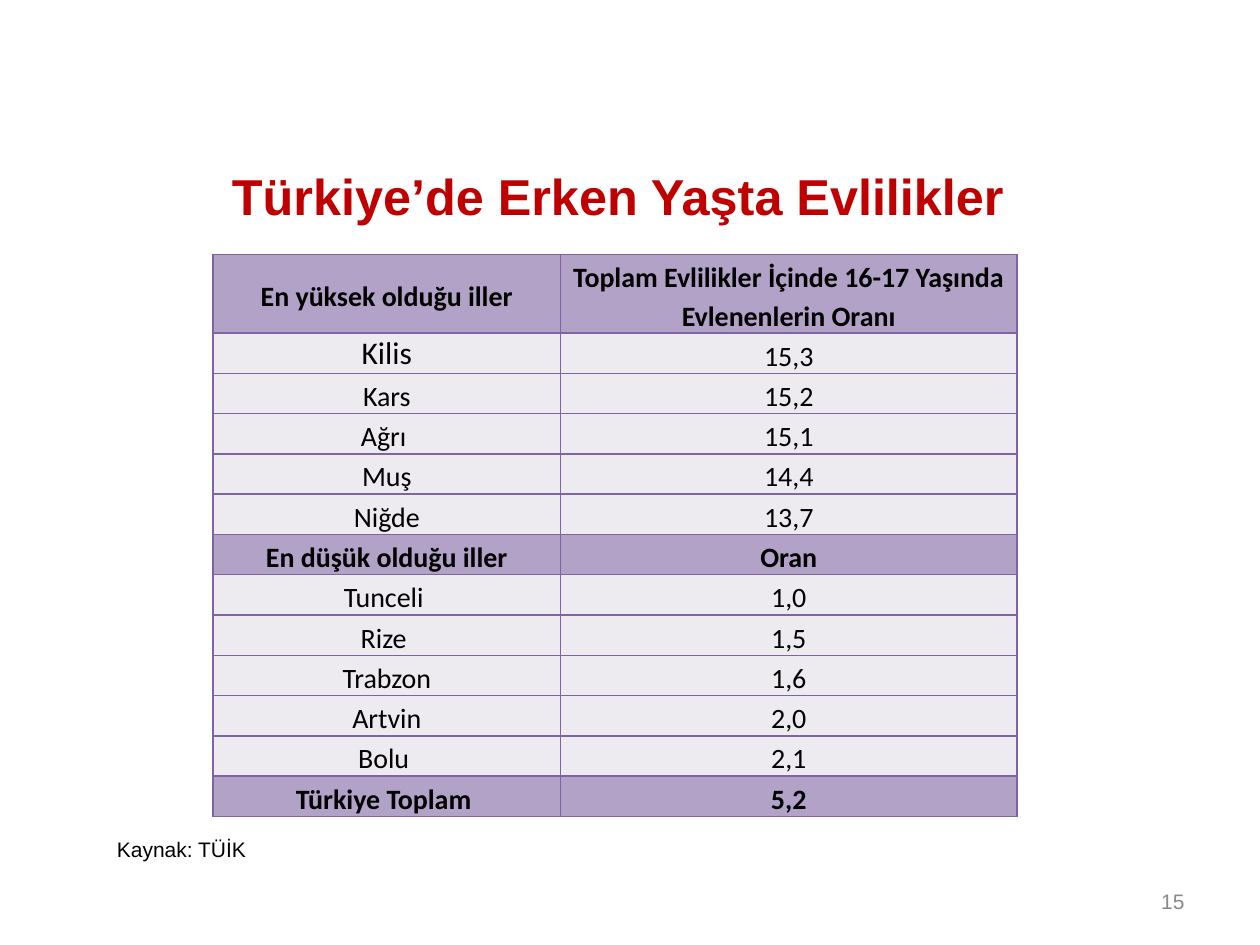
import pptx
import pptx.dml.color
import pptx.enum.text
import pptx.oxml.ns
import pptx.util
from lxml import etree

Inches = pptx.util.Inches
Pt = pptx.util.Pt
RGBColor = pptx.dml.color.RGBColor
Align = pptx.enum.text.PP_ALIGN
Anchor = pptx.enum.text.MSO_ANCHOR
qn = pptx.oxml.ns.qn

RED = RGBColor(0xC0, 0x00, 0x00)
BLACK = RGBColor(0x00, 0x00, 0x00)
GREY = RGBColor(0x89, 0x89, 0x89)
PURPLE = RGBColor(0x80, 0x64, 0xA2)
BAND = RGBColor(0xB3, 0xA2, 0xC7)
PALE = RGBColor(0xED, 0xEA, 0xF0)

HEADING_ROWS = (0, 6, 12)
RATES = [
    ("En yüksek olduğu iller", "Toplam Evlilikler İçinde 16-17 Yaşında Evlenenlerin Oranı"),
    ("Kilis", "15,3"),
    ("Kars", "15,2"),
    ("Ağrı ", "15,1"),
    ("Muş", "14,4"),
    ("Niğde", "13,7"),
    ("En düşük olduğu iller", "Oran"),
    ("Tunceli ", "1,0"),
    ("Rize ", "1,5"),
    ("Trabzon", "1,6"),
    ("Artvin", "2,0"),
    ("Bolu ", "2,1"),
    ("Türkiye Toplam ", "5,2"),
]


class SlideBuilder:
    text_font = "Arial"
    table_font = "Calibri"

    def __init__(self, slide):
        self.slide = slide

    def span(self, para, text, size, color, font, bold=False):
        span = para.add_run()
        span.text = text
        span.font.name = font
        span.font.size = Pt(size)
        span.font.bold = bold
        span.font.color.rgb = color

    def text(self, place, text, size, color, align=Align.LEFT, anchor=Anchor.TOP, bold=False):
        box = self.slide.shapes.add_textbox(*map(Inches, place))
        frame = box.text_frame
        frame.word_wrap = True
        frame.vertical_anchor = anchor
        para = frame.paragraphs[0]
        para.alignment = align
        self.span(para, text, size, color, self.text_font, bold)
        return frame

    def border(self, cell):
        properties = cell._tc.get_or_add_tcPr()
        for side in ("a:lnL", "a:lnR", "a:lnT", "a:lnB"):
            line = etree.SubElement(properties, qn(side), w=str(Pt(1)))
            fill = etree.SubElement(line, qn("a:solidFill"))
            etree.SubElement(fill, qn("a:srgbClr"), val=str(PURPLE))

    def cell(self, cell, text, heading, anchor, size=16, loose=True):
        """Fill one cell; loose adds the wider line and paragraph spacing."""
        self.border(cell)
        cell.fill.solid()
        cell.fill.fore_color.rgb = BAND if heading else PALE
        cell.margin_left = cell.margin_right = Inches(0.07)
        cell.margin_top = Inches(0.01)
        cell.margin_bottom = 0
        cell.vertical_anchor = anchor
        para = cell.text_frame.paragraphs[0]
        para.alignment = Align.CENTER
        if loose:
            para.line_spacing = 1.15
            para.space_after = Pt(10)
        self.span(para, text, size, BLACK, self.table_font, heading)

    def table(self, place, widths, first_height, row_height, rows):
        frame = self.slide.shapes.add_table(len(rows), len(widths), *map(Inches, place))
        table = frame.table
        table.first_row = table.horz_banding = False
        for column, width in zip(table.columns, widths):
            column.width = Inches(width)
        for index, (province, rate) in enumerate(rows):
            first = index == 0
            table.rows[index].height = Inches(first_height if first else row_height)
            heading = index in HEADING_ROWS
            larger = province == "Kilis"
            self.cell(table.cell(index, 0), province, heading,
                      Anchor.MIDDLE if first else Anchor.TOP,
                      size=18 if larger else 16, loose=not larger)
            self.cell(table.cell(index, 1), rate, heading,
                      Anchor.TOP if first else Anchor.MIDDLE)


def main():
    deck = pptx.Presentation()
    deck.slide_width = Inches(10)
    deck.slide_height = Inches(7.5)
    page = SlideBuilder(deck.slides.add_slide(deck.slide_layouts[6]))

    title = page.text((0.11, 1.15, 9.22, 0.63), "Türkiye’de Erken Yaşta Evlilikler",
                      28.8, RED, Align.CENTER, Anchor.MIDDLE, bold=True)
    title.margin_left = Inches(0.47)
    title.margin_top = Inches(0.17)
    title.margin_bottom = 0

    page.text((7.17, 6.95, 2.33, 0.4), "15", 12, GREY, Align.RIGHT, Anchor.MIDDLE)
    page.table((1.69, 2.02, 6.38, 4.42), (2.76, 3.62), 0.39, 0.32, RATES)
    page.text((0.83, 6.59, 1.81, 0.3), "Kaynak: TÜİK", 12, BLACK)
    deck.save("out.pptx")


if __name__ == "__main__":
    main()
